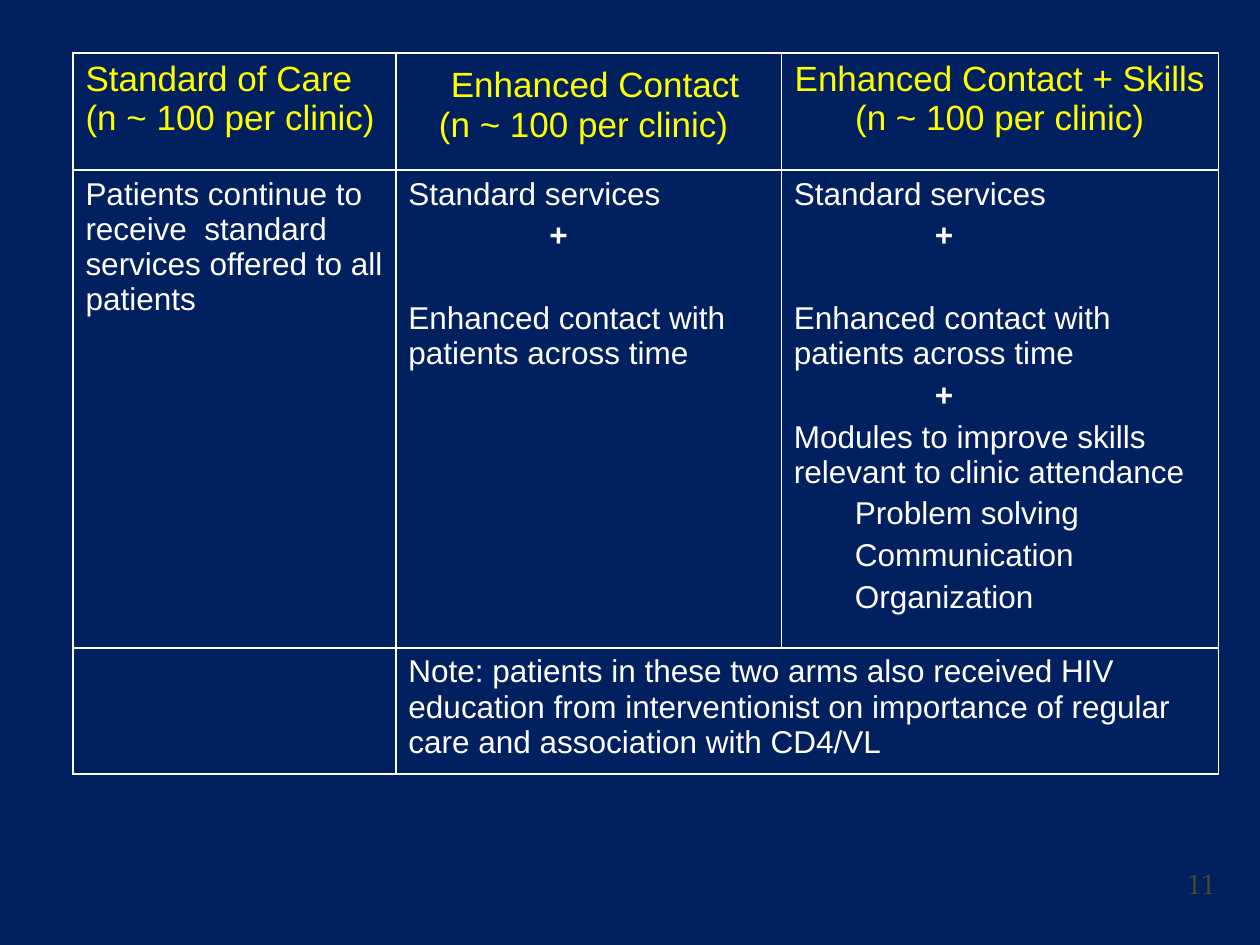
"""Build a slide with a table comparing three study arms."""
from lxml.etree import SubElement
from pptx import Presentation
from pptx.dml.color import RGBColor
from pptx.enum.text import MSO_ANCHOR, PP_ALIGN
from pptx.oxml.ns import qn
from pptx.util import Cm, Pt

NAVY = RGBColor(0x00, 0x20, 0x60)
WHITE = RGBColor(0xFF, 0xFF, 0xFF)
YELLOW = RGBColor(0xFF, 0xFF, 0x00)
OLIVE = RGBColor(0x44, 0x4D, 0x26)

COLS = [6.51, 7.77, 8.81]
ROWS = [2.36, 9.63, 2.39]
LEFT, TOP = 1.47, 1.07

HEAD = dict(size=20, color=YELLOW)
MID = dict(HEAD, align=PP_ALIGN.CENTER)
BODY = dict(before=3.6)
PLUS = dict(BODY, bold=True, indent=2.84)
ITEM = dict(BODY, indent=1.23)
AFTER_GAP = dict(before=27.3)

SERVICES = [
    ("Standard services", {}),
    ("+", PLUS),
    ("Enhanced contact with patients across time", AFTER_GAP),
]
CELLS = {
    (0, 0): [("Standard of Care", HEAD), ("(n ~ 100 per clinic)", HEAD)],
    (0, 1): [
        ("Enhanced Contact ", dict(MID, indent=0.46)),
        ("(n ~ 100 per clinic) ", dict(MID, before=0.8)),
    ],
    (0, 2): [("Enhanced Contact + Skills", MID), ("(n ~ 100 per clinic)", MID)],
    (1, 0): [("Patients continue to receive  standard services offered to all patients", {})],
    (1, 1): SERVICES,
    (1, 2): SERVICES + [
        ("+", PLUS),
        ("Modules to improve skills relevant to clinic attendance", BODY),
        ("Problem solving", ITEM),
        ("Communication", ITEM),
        ("Organization", ITEM),
    ],
    (2, 1): [(
        "Note: patients in these two arms also received HIV education from "
        "interventionist on importance of regular care and association with CD4/VL", {},
    )],
}


def add_text(tf, text, *, first=False, size=18, color=WHITE, font="Arial",
             bold=False, align=PP_ALIGN.LEFT, before=0, indent=0):
    p = tf.paragraphs[0] if first else tf.add_paragraph()
    p.alignment = align
    if before:
        p.space_before = Pt(before)
    if indent:
        pPr = p._p.get_or_add_pPr()
        pPr.set("marL", str(Cm(indent)))
        pPr.set("indent", "0")
    r = p.add_run()
    r.text = text
    r.font.name, r.font.size, r.font.bold = font, Pt(size), bold
    r.font.color.rgb = color


def style_cell(cell):
    tcPr = cell._tc.get_or_add_tcPr()
    for side in ("a:lnL", "a:lnR", "a:lnT", "a:lnB"):
        ln = SubElement(tcPr, qn(side), w=str(Pt(1)))
        SubElement(SubElement(ln, qn("a:solidFill")), qn("a:srgbClr"), val=str(WHITE))
    cell.fill.background()


def add_arms_table(s):
    sp = s.shapes.add_table(len(ROWS), len(COLS), Cm(LEFT), Cm(TOP),
                            Cm(sum(COLS)), Cm(sum(ROWS)))
    table = sp.table
    table.first_row = table.horz_banding = False
    for col, width in zip(table.columns, COLS):
        col.width = Cm(width)
    for row, height in zip(table.rows, ROWS):
        row.height = Cm(height)
    for cell in table.iter_cells():
        style_cell(cell)
    table.cell(2, 1).merge(table.cell(2, 2))
    table.cell(0, 1).margin_top = Cm(0.25)
    for (row, col), lines in CELLS.items():
        for i, (text, fmt) in enumerate(lines):
            add_text(table.cell(row, col).text_frame, text, first=i == 0, **fmt)


def add_page_number(s):
    tf = s.shapes.add_textbox(Cm(23.37), Cm(17.17), Cm(1.7), Cm(1.27)).text_frame
    tf.word_wrap = True
    tf.vertical_anchor = MSO_ANCHOR.MIDDLE
    tf.margin_left = tf.margin_right = tf.margin_top = tf.margin_bottom = 0
    add_text(tf, "11", first=True, size=16, color=OLIVE,
             font="TeX Gyre Pagella", align=PP_ALIGN.CENTER)


def main():
    prs = Presentation()
    prs.slide_width, prs.slide_height = Cm(25.4), Cm(19.05)
    s = prs.slides.add_slide(prs.slide_layouts[6])
    s.background.fill.solid()
    s.background.fill.fore_color.rgb = NAVY
    add_page_number(s)
    add_arms_table(s)
    prs.save("out.pptx")


if __name__ == "__main__":
    main()
